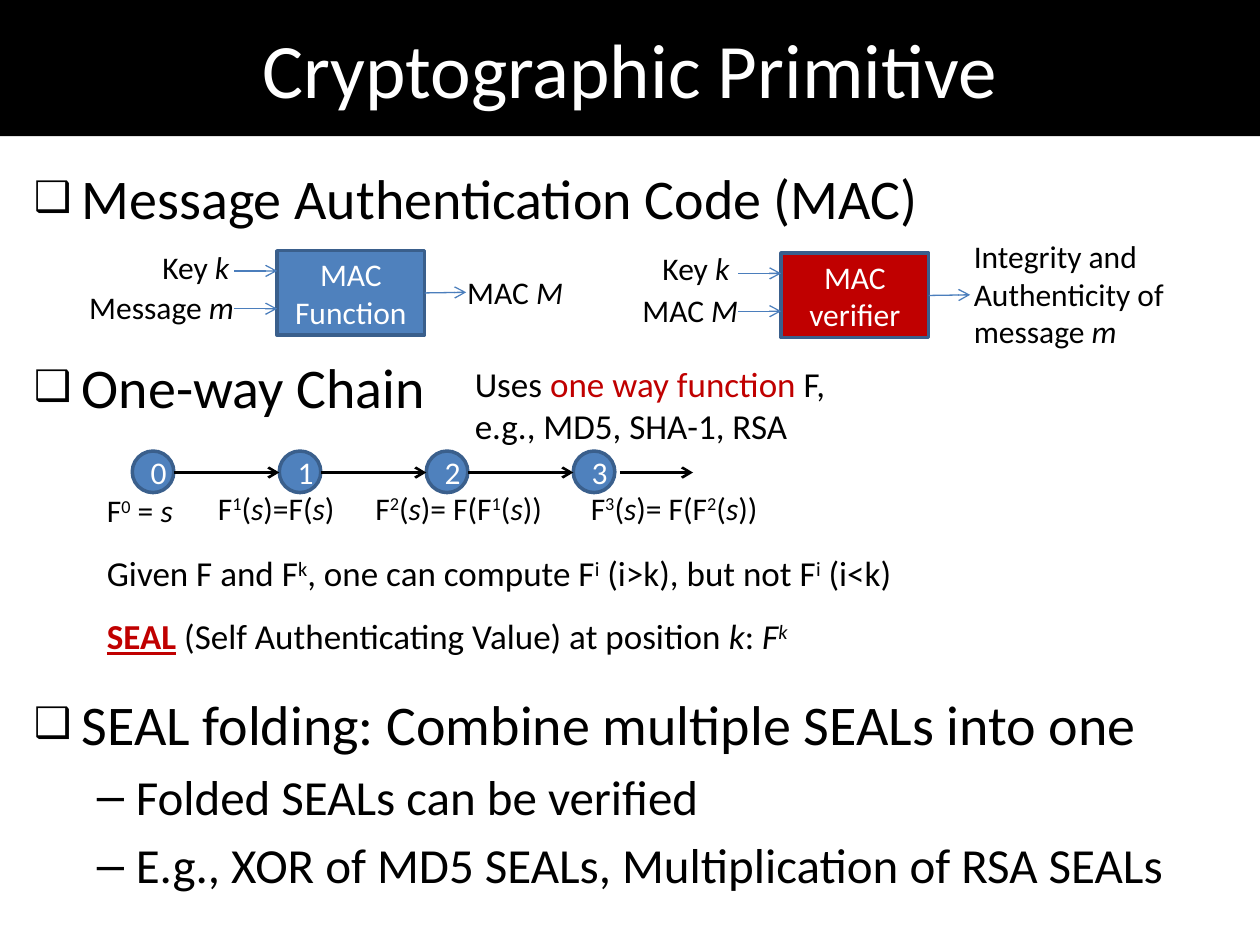
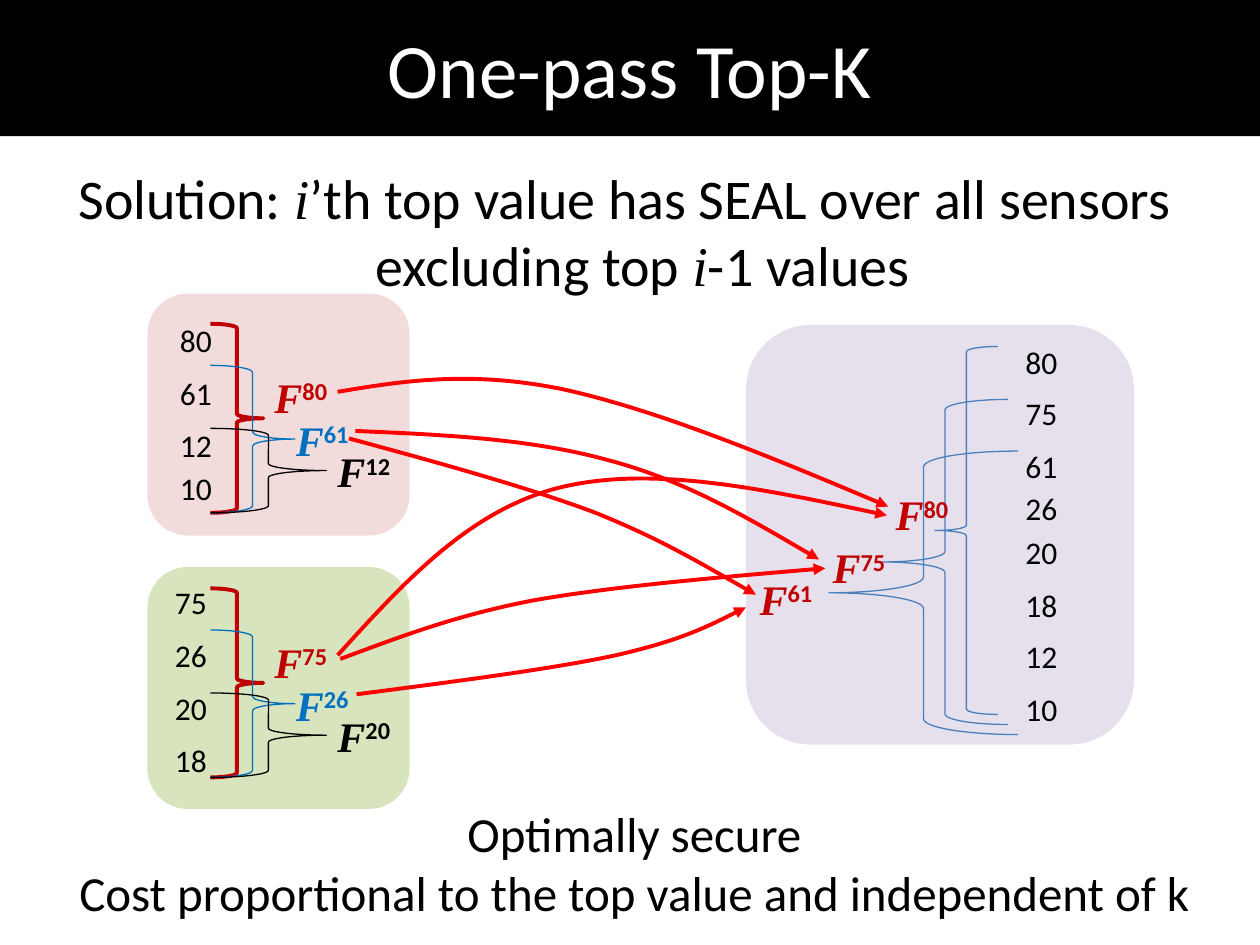
from lxml.etree import SubElement
from pptx import Presentation
from pptx.dml.color import RGBColor
from pptx.enum.shapes import MSO_CONNECTOR, MSO_SHAPE
from pptx.enum.text import MSO_ANCHOR, MSO_AUTO_SIZE, PP_ALIGN
from pptx.oxml.ns import qn
from pptx.util import Inches, Pt

BLACK, WHITE = "000000", "FFFFFF"
BLUE, EDGE, LINE = "4F81BD", "3A5F8C", "4B7EBC"
CRIMSON, SKY, RED = "C00000", "0070C0", "FF0000"
MARKS = "^_~*@"


def rgb(value):
    return RGBColor.from_string(value)


class Deck:
    font = "Calibri"
    serif = "Times New Roman"

    def __init__(self):
        self.prs = Presentation()
        self.prs.slide_width = Inches(10)
        self.prs.slide_height = Inches(7.5)
        self.s = None

    def slide(self, title):
        self.s = self.prs.slides.add_slide(self.prs.slide_layouts[6])
        self.box(MSO_SHAPE.RECTANGLE, 0, 0, 10, 1.08, BLACK, text=title, size=44)

    def runs(self, p, text, size, color=BLACK, bold=False):
        """Pieces split by |; leading ^ _ ~ * @ mean superscript, italic, accent, strong, serif."""
        for piece in text.split("|"):
            words = piece.lstrip(MARKS)
            marks = piece[:len(piece) - len(words)]
            r = p.add_run()
            r.text = words
            f = r.font
            f.size = Pt(size)
            f.name = self.serif if "@" in marks else self.font
            f.color.rgb = rgb(CRIMSON if "~" in marks else color)
            f.italic = "_" in marks or "@" in marks
            f.bold = bold or "*" in marks
            f.underline = "*" in marks
            if "^" in marks:
                r._r.get_or_add_rPr().set("baseline", "30000")

    def box(self, kind, x, y, w, h, fill=None, line=None, width=2, text="", size=18):
        sp = self.s.shapes.add_shape(kind, Inches(x), Inches(y), Inches(w), Inches(h))
        sp.shadow.inherit = False
        if fill:
            sp.fill.solid()
            sp.fill.fore_color.rgb = rgb(fill)
        else:
            sp.fill.background()
        if line:
            sp.line.color.rgb = rgb(line)
            sp.line.width = Pt(width)
        else:
            sp.line.fill.background()
        if text:
            tf = sp.text_frame
            tf.word_wrap = True
            tf.vertical_anchor = MSO_ANCHOR.MIDDLE
            p = tf.paragraphs[0]
            p.alignment = PP_ALIGN.CENTER
            self.runs(p, text, size, WHITE)
        return sp

    def frame(self, x, y, w, h, wrap, grow):
        tf = self.s.shapes.add_textbox(Inches(x), Inches(y), Inches(w), Inches(h)).text_frame
        tf.word_wrap = wrap
        tf.auto_size = MSO_AUTO_SIZE.SHAPE_TO_FIT_TEXT if grow else MSO_AUTO_SIZE.NONE
        return tf

    def text(self, x, y, w, h, *lines, size=18, color=BLACK, bold=False, wrap=False,
             align=PP_ALIGN.LEFT):
        tf = self.frame(x, y, w, h, wrap, True)
        for i, line in enumerate(lines):
            p = tf.add_paragraph() if i else tf.paragraphs[0]
            p.alignment = align
            self.runs(p, line, size, color, bold)

    def body(self, x, y, w, h, *items, align=PP_ALIGN.LEFT):
        tf = self.frame(x, y, w, h, True, False)
        for i, (bullet, line) in enumerate(items):
            p = tf.add_paragraph() if i else tf.paragraphs[0]
            sub = bullet == "–"
            size = 28 if sub else 32
            p.alignment = align
            p.space_before = Pt(size * 0.2)
            pPr = p._p.get_or_add_pPr()
            pPr.set("marL", str(Inches(0.81 if sub else 0.38)))
            pPr.set("indent", str(-Inches(0.31 if sub else 0.38)))
            if bullet:
                if not sub:
                    SubElement(pPr, qn("a:buSzPct"), val="75000")
                SubElement(pPr, qn("a:buFont"), typeface="Arial")
                SubElement(pPr, qn("a:buChar"), char=bullet)
            self.runs(p, line, size)

    def tip(self, shape, kind, color, width):
        shape.line.color.rgb = rgb(color)
        shape.line.width = Pt(width)
        SubElement(shape.line._get_or_add_ln(), qn("a:tailEnd"), type=kind)

    def arrow(self, x1, y1, x2, y2, color=LINE, width=0.75, start=None):
        c = self.s.shapes.add_connector(MSO_CONNECTOR.STRAIGHT, Inches(x1), Inches(y1),
                                        Inches(x2), Inches(y2))
        if start is not None:
            c.begin_connect(start, 3)
        self.tip(c, "arrow", color, width)
        SubElement(c._element.spPr, qn("a:effectLst"))

    def curve(self, *points):
        start, *rest = [(Inches(x), Inches(y)) for x, y in points]
        fb = self.s.shapes.build_freeform(*start)
        fb.add_line_segments(rest, close=False)
        sp = fb.convert_to_shape()
        geom = sp._element.find(".//" + qn("a:path"))
        steps = geom.findall(qn("a:lnTo"))
        for i in range(0, len(steps), 3):
            bezier = SubElement(geom, qn("a:cubicBezTo"))
            for step in steps[i:i + 3]:
                bezier.append(step[0])
                geom.remove(step)
        sp.shadow.inherit = False
        sp.fill.background()
        self.tip(sp, "triangle", RED, 2.25)


def primitives(d):
    d.slide("Cryptographic Primitive")
    d.body(0.17, 1.25, 9.58, 1.67, ("❑", "Message Authentication Code (MAC)"))

    for x, y, fill, name in ((2.2, 1.99, BLUE, "MAC Function"),
                             (6.2, 2.01, CRIMSON, "MAC verifier")):
        mac = d.box(MSO_SHAPE.RECTANGLE, x, y, 1.17, 0.67, fill, EDGE, text=name)
        for dy in (0.16, 0.46):
            d.arrow(x - 0.34, y + dy, x, y + dy)
        d.arrow(x + 1.17, y + 0.33, x + 1.5, y + 0.33, start=mac)
    for x, y, w, label in ((1.19, 1.92, 0.76, "Key |_k"), (0.61, 2.24, 1.38, "Message |_m"),
                           (3.61, 2.12, 0.97, "MAC |_M"), (5.16, 1.93, 0.76, "Key |_k"),
                           (5, 2.26, 0.97, "MAC |_M")):
        d.text(x, y, w, 0.4, label)
    d.text(7.63, 1.83, 1.79, 1.01, "Integrity and", "Authenticity of", "message |_m")

    d.body(0.17, 2.75, 9.58, 0.75, ("❑", "One-way Chain"))
    d.text(3.67, 2.83, 3.03, 0.77, "Uses |~one way function| F,", "e.g., MD5, SHA-1, RSA",
           size=20, wrap=True)

    chain = ((0.75, 3.85, 0.74, "F|^0| = |_s"),
             (1.63, 3.83, 1.15, "F|^1|(|_s|)=F(|_s|)"),
             (2.88, 3.83, 1.61, "F|^2|(|_s|)= F(F|^1|(|_s|))"),
             (4.59, 3.83, 1.62, "F|^3|(|_s|)= F(F|^2|(|_s|))"))
    pitch = 3.5 / 3
    for i, (x, y, w, label) in enumerate(chain):
        left = 1.05 + i * pitch
        d.box(MSO_SHAPE.OVAL, left, 3.58, 0.33, 0.33, BLUE, EDGE, text=str(i))
        d.text(x, y, w, 0.4, label)
        if i:
            d.arrow(left - pitch + 0.33, 3.75, left, 3.75, BLACK, 1.5)
    d.arrow(4.92, 3.75, 5.5, 3.75, BLACK, 1.5)

    d.text(0.75, 4.33, 6.51, 0.44,
           "Given F and F|^k|, one can compute F|^i| (i>k), but not F|^i| (i<k)", size=20)
    d.text(0.75, 4.83, 5.71, 0.44,
           "*~SEAL| (Self Authenticating Value) at position |_k|: |_F|_^k", size=20)
    d.body(0.17, 5.42, 9.5, 1.77,
           ("❑", "SEAL folding: Combine multiple SEALs into one"),
           ("–", "Folded SEALs can be verified"),
           ("–", "E.g., XOR of MD5 SEALs, Multiplication of RSA SEALs"))


def top_k(d):
    def numbers(x, column):
        for value, y in column:
            d.text(x, y, 0.46, 0.4, value)

    def seal(x, y, power, color=CRIMSON):
        d.text(x, y, 0.65, 0.5, "@F|^" + power, size=24, color=color, bold=True)

    d.slide("One-pass Top-K")
    d.body(0.17, 1.25, 9.58, 1.2,
           ("", "Solution: |@i|’th top value has SEAL over all sensors excluding top |@i|-1 values "),
           align=PP_ALIGN.CENTER)

    for x, y, w, h, fill in ((5.92, 2.58, 3.08, 3.33, "E6E0EC"),
                             (1.17, 2.33, 2.08, 1.92, "F2DCDB"),
                             (1.17, 4.5, 2.08, 1.92, "D7E4BD")):
        d.box(MSO_SHAPE.ROUNDED_RECTANGLE, x, y, w, h, fill)

    numbers(1.33, (("80", 2.5), ("61", 2.92), ("12", 3.33), ("10", 3.67)))
    numbers(1.29, (("75", 4.58), ("26", 5), ("20", 5.42), ("18", 5.83)))
    numbers(8.04, (("80", 2.67), ("75", 3.08), ("61", 3.5), ("26", 3.83),
                   ("20", 4.18), ("18", 4.6), ("12", 5.01), ("10", 5.43)))

    braces = ((0, 0.42, CRIMSON, 2.25), (0.33, 0.67, SKY, 0.75), (0.83, 0.92, BLACK, 0.75))
    places = ((2.08, 0.33), (2.25, 0.67), (2.58, 0.92))
    for top, powers in ((2.57, ("80", "61", "12")), (4.67, ("75", "26", "20"))):
        for (dy, w, color, width), (x, label_dy), power in zip(braces, places, powers):
            seal(x, top + label_dy, power, color)
            d.box(MSO_SHAPE.RIGHT_BRACE, 1.67, top + dy, w, 1.5 - dy, line=color, width=width)

    for x, y, w, h in ((7.42, 2.75, 0.5, 2.92), (7, 3.17, 1, 2.58), (6.58, 3.58, 1.5, 2.25)):
        d.box(MSO_SHAPE.LEFT_BRACE, x, y, w, h, line=LINE, width=0.75)
    for x, y, power in ((7.01, 3.83, "80"), (6.51, 4.25, "75"), (5.93, 4.5, "61")):
        seal(x, y, power)

    for points in (
        ((2.68, 3.11), (3.21, 3.02), (3.74, 2.94), (4.47, 3.09), (5.2, 3.25), (6.13, 3.63), (7.05, 4.02)),
        ((2.68, 5.2), (3.2, 4.63), (3.72, 4.05), (4.44, 3.87), (5.17, 3.69), (6.1, 3.89), (7.04, 4.09)),
        ((2.7, 5.23), (3.16, 5.06), (3.62, 4.88), (4.26, 4.76), (4.91, 4.65), (5.73, 4.58), (6.55, 4.51)),
        ((2.82, 3.42), (3.51, 3.45), (4.2, 3.48), (4.82, 3.65), (5.43, 3.81), (5.97, 4.13), (6.5, 4.44)),
        ((2.77, 3.48), (3.47, 3.67), (4.16, 3.86), (4.7, 4.06), (5.23, 4.27), (5.61, 4.5), (6, 4.72)),
        ((2.83, 5.51), (3.6, 5.41), (4.38, 5.31), (4.89, 5.2), (5.41, 5.08), (5.66, 4.95), (5.92, 4.82)),
    ):
        d.curve(*points)

    d.text(0.5, 6.33, 9.07, 1.04, "Optimally secure",
           "Cost proportional to the top value and independent of k",
           size=28, align=PP_ALIGN.CENTER)


def main():
    d = Deck()
    primitives(d)
    top_k(d)
    d.prs.save("out.pptx")


if __name__ == "__main__":
    main()
